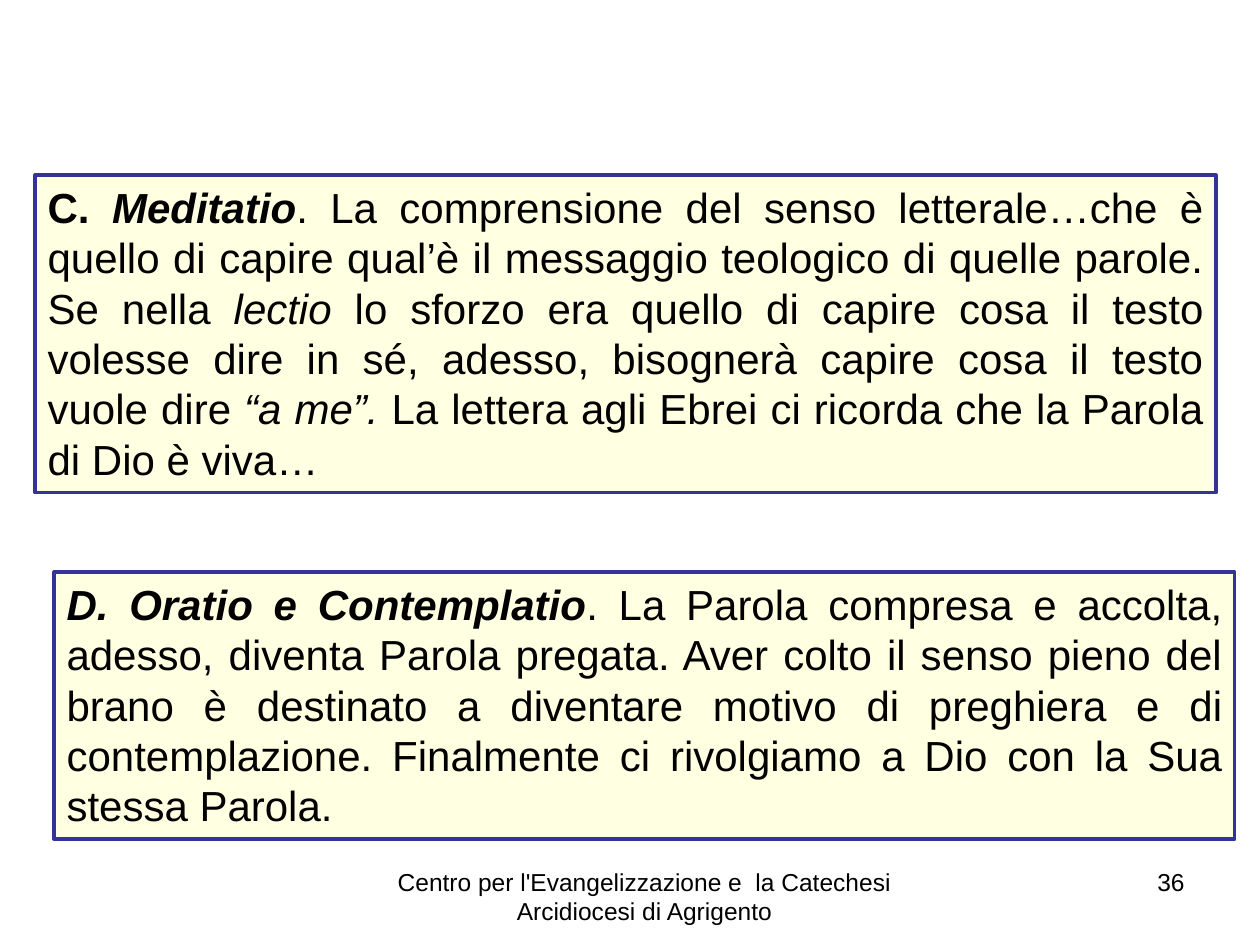
import pptx
import pptx.dml.color
import pptx.enum.shapes
import pptx.enum.text
import pptx.util

Inches = pptx.util.Inches
Pt = pptx.util.Pt
RGBColor = pptx.dml.color.RGBColor
Align = pptx.enum.text.PP_ALIGN
Anchor = pptx.enum.text.MSO_ANCHOR

BLACK = RGBColor(0x00, 0x00, 0x00)
CREAM = RGBColor(0xFF, 0xFF, 0xE1)
NAVY = RGBColor(0x33, 0x33, 0x99)

PLAIN = {"bold": False, "italic": False}
BOLD = {"bold": True, "italic": False}
SLANT = {"bold": False, "italic": True}
BOTH = {"bold": True, "italic": True}


class Page:
    def __init__(self, slide, face="Arial"):
        self.slide = slide
        self.face = face

    def fill_text(self, shape, runs, size, align):
        """Write (text, format) pairs as one paragraph."""
        frame = shape.text_frame
        frame.word_wrap = True
        frame.vertical_anchor = Anchor.TOP
        para = frame.paragraphs[0]
        para.alignment = align
        for text, form in runs:
            run = para.add_run()
            run.text = text
            run.font.color.rgb = BLACK
            look = {"name": self.face, "size": Pt(size), **form}
            for key, value in look.items():
                setattr(run.font, key, value)

    def label(self, left, width, text, align):
        box = self.slide.shapes.add_textbox(
            Inches(left), Inches(6.83), Inches(width), Inches(0.52))
        self.fill_text(box, [(text, PLAIN)], 14, align)

    def panel(self, left, top, height, runs):
        box = self.slide.shapes.add_shape(
            pptx.enum.shapes.MSO_SHAPE.RECTANGLE,
            Inches(left), Inches(top), Inches(9.37), Inches(height))
        box.shadow.inherit = False
        box.fill.solid()
        box.fill.fore_color.rgb = CREAM
        box.line.color.rgb = NAVY
        box.line.width = Pt(2)
        self.fill_text(box, runs, 24, Align.JUSTIFY)
        box.text_frame.auto_size = pptx.enum.text.MSO_AUTO_SIZE.SHAPE_TO_FIT_TEXT


def main():
    deck = pptx.Presentation()
    deck.slide_width = Inches(10)
    deck.slide_height = Inches(7.5)
    page = Page(deck.slides.add_slide(deck.slide_layouts[6]))

    page.label(2.81, 4.61, "Centro per l'Evangelizzazione e  la Catechesi "
               "Arcidiocesi di Agrigento", Align.CENTER)
    page.label(7.17, 2.33, "36", Align.RIGHT)

    page.panel(0.28, 1.39, 2.52, [
        ("C. ", BOLD),
        ("Meditatio", BOTH),
        (". La comprensione del senso letterale…che è quello di capire "
         "qual’è il messaggio teologico di quelle parole. Se nella ", PLAIN),
        ("lectio ", SLANT),
        ("lo sforzo era quello di capire cosa il testo volesse dire in sé, "
         "adesso, bisognerà capire cosa il testo vuole dire ", PLAIN),
        ("“a me”.", SLANT),
        (" La lettera agli Ebrei ci ricorda che la Parola di Dio è viva…",
         PLAIN),
    ])
    page.panel(0.43, 4.54, 2.12, [
        ("D. Oratio e Contemplatio", BOTH),
        (". La Parola compresa e accolta, adesso, diventa Parola pregata. "
         "Aver colto il senso pieno del brano è destinato a diventare motivo "
         "di preghiera e di contemplazione. Finalmente ci rivolgiamo a Dio "
         "con la Sua stessa Parola.", PLAIN),
    ])
    deck.save("out.pptx")


if __name__ == "__main__":
    main()
